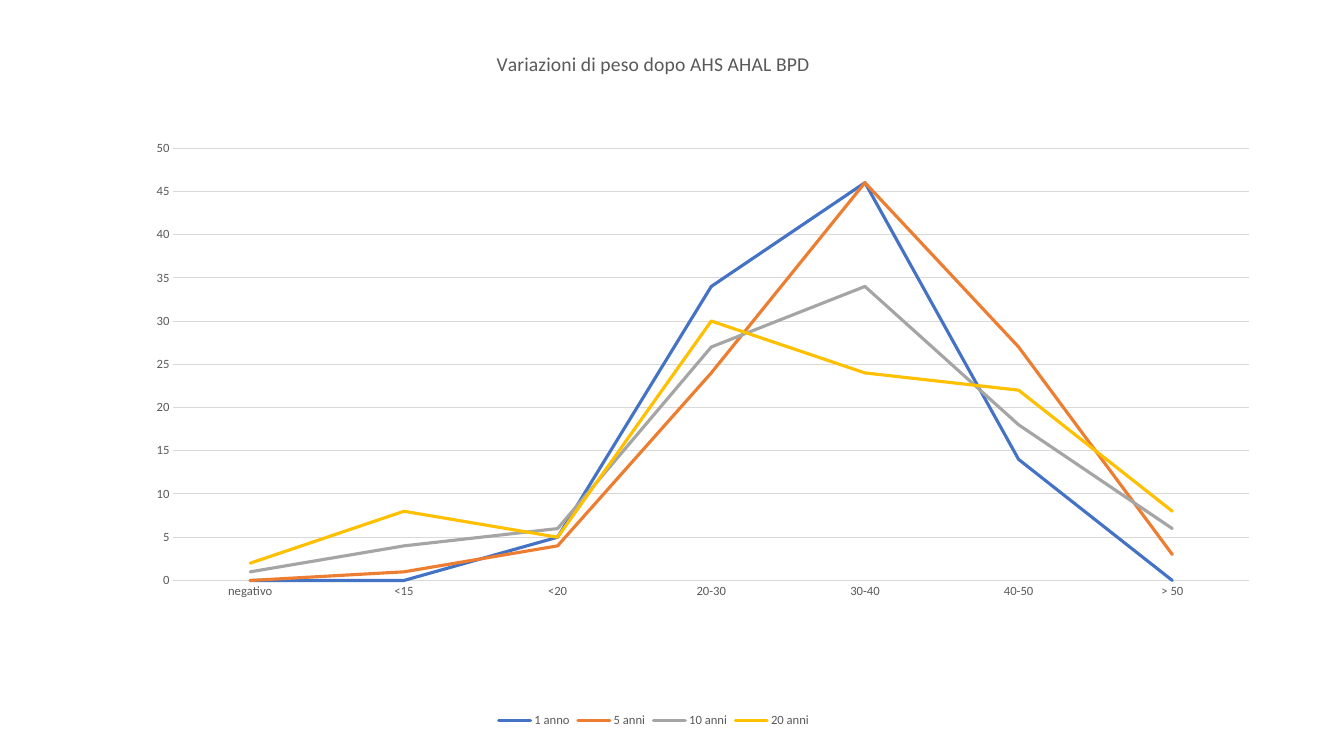
from dataclasses import dataclass

from lxml import etree
from pptx import Presentation
from pptx.chart.data import CategoryChartData
from pptx.dml.color import RGBColor
from pptx.enum.chart import XL_CHART_TYPE, XL_LEGEND_POSITION, XL_MARKER_STYLE, XL_TICK_MARK
from pptx.oxml.ns import qn
from pptx.util import Inches, Pt

LINE_CHART = XL_CHART_TYPE.LINE
LEGEND_BOTTOM = XL_LEGEND_POSITION.BOTTOM
NO_MARKER = XL_MARKER_STYLE.NONE
NO_TICK = XL_TICK_MARK.NONE


@dataclass(frozen=True)
class Theme:
    font: str = "Calibri"
    text: str = "595959"
    grid: str = "D9D9D9"
    series: tuple = ("4472C4", "ED7D31", "A5A5A5", "FFC000")
    title_size: float = 14
    label_size: float = 9
    grid_width: float = 0.75
    series_width: float = 2.25


CHART_WIDTH, CHART_HEIGHT = 11.83, 6.98
WEIGHT_LOSS_BANDS = ("negativo", "<15", "<20", "20-30", "30-40", "40-50", "> 50")
FOLLOW_UPS = {
    "1 anno": (0, 0, 5, 34, 46, 14, 0),
    "5 anni": (0, 1, 4, 24, 46, 27, 3),
    "10 anni": (1, 4, 6, 27, 34, 18, 6),
    "20 anni": (2, 8, 5, 30, 24, 22, 8),
}


class SlideBuilder:
    def __init__(self, slide, theme):
        self.slide = slide
        self.theme = theme

    def style_font(self, font, size):
        font.name = self.theme.font
        font.size = Pt(size)
        font.bold = False
        font.color.rgb = RGBColor.from_string(self.theme.text)

    def style_line(self, line, color, width):
        line.color.rgb = RGBColor.from_string(color)
        line.width = Pt(width)

    def place(self, element, index, modes, **inches):
        """Place a chart part by inches measured within the chart."""
        layout = element.find(qn("c:layout"))
        if layout is None:
            layout = etree.Element(qn("c:layout"))
            element.insert(index, layout)
        manual = etree.SubElement(layout, qn("c:manualLayout"))
        for tag, mode in modes.items():
            etree.SubElement(manual, qn(f"c:{tag}")).set("val", mode)
        for tag, length in inches.items():
            whole = CHART_WIDTH if tag in "xw" else CHART_HEIGHT
            etree.SubElement(manual, qn(f"c:{tag}")).set("val", str(length / whole))

    def line_chart(self, left, top, categories, series):
        data = CategoryChartData()
        data.categories = categories
        for name, values in series.items():
            data.add_series(name, values)
        frame = self.slide.shapes.add_chart(
            LINE_CHART, Inches(left), Inches(top),
            Inches(CHART_WIDTH), Inches(CHART_HEIGHT), data)
        chart = frame.chart
        self.style_font(chart.font, self.theme.label_size)
        chart.plots[0].vary_by_categories = False
        for follow_up, color in zip(chart.plots[0].series, self.theme.series):
            follow_up.smooth = False
            follow_up.marker.style = NO_MARKER
            self.style_line(follow_up.format.line, color, self.theme.series_width)
            # Round line ends
            follow_up._element.find(f"{qn('c:spPr')}/{qn('a:ln')}").set("cap", "rnd")
        return chart

    def chart_title(self, chart, text, x, y):
        chart.has_title = True
        title = chart.chart_title
        title.include_in_layout = False
        title.text_frame.text = text
        heading = title.text_frame.paragraphs[0]
        self.style_font(heading.runs[0].font, self.theme.title_size)
        self.place(title._element, 1, {"xMode": "edge", "yMode": "edge"}, x=x, y=y)

    def plot_area(self, chart, x, y, w, h):
        modes = {"layoutTarget": "inner", "xMode": "edge", "yMode": "edge"}
        self.place(chart._chartSpace.chart.plotArea, 0, modes, x=x, y=y, w=w, h=h)

    def axes(self, chart, maximum, step):
        theme = self.theme
        bands, percent = chart.category_axis, chart.value_axis
        for axis in (bands, percent):
            axis.major_tick_mark = axis.minor_tick_mark = NO_TICK
            self.style_font(axis.tick_labels.font, theme.label_size)
        self.style_line(bands.format.line, theme.grid, theme.grid_width)
        percent.minimum_scale, percent.maximum_scale = 0, maximum
        percent.major_unit = step
        percent.format.line.fill.background()
        percent.has_major_gridlines = True
        self.style_line(percent.major_gridlines.format.line, theme.grid, theme.grid_width)

    def legend(self, chart):
        chart.has_legend = True
        chart.legend.position = LEGEND_BOTTOM
        chart.legend.include_in_layout = False
        self.style_font(chart.legend.font, self.theme.label_size)


def main():
    deck = Presentation()
    deck.slide_width, deck.slide_height = Inches(13.33), Inches(7.5)
    builder = SlideBuilder(deck.slides.add_slide(deck.slide_layouts[6]), Theme())

    # Weight change by follow-up
    weight_chart = builder.line_chart(0.57, 0.28, WEIGHT_LOSS_BANDS, FOLLOW_UPS)
    builder.chart_title(weight_chart, "Variazioni di peso dopo AHS AHAL BPD", x=4.32, y=0.18)

    # Axes, legend and plot area
    builder.axes(weight_chart, maximum=50, step=5)
    builder.legend(weight_chart)
    builder.plot_area(weight_chart, x=1.15, y=1.19, w=10.67, h=4.29)

    deck.save("out.pptx")


if __name__ == "__main__":
    main()
